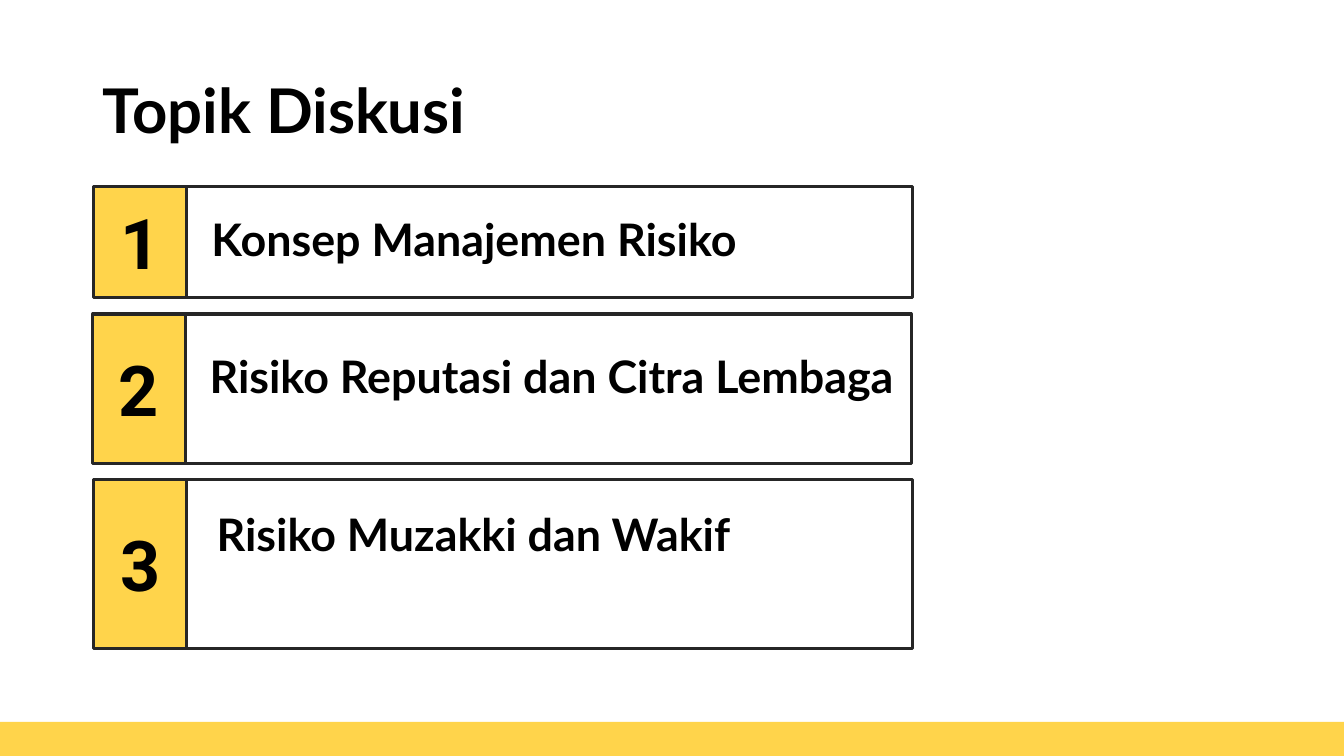
"""Build the discussion topics slide with three numbered boxes."""
from dataclasses import dataclass

from pptx import Presentation
from pptx.dml.color import RGBColor
from pptx.enum.shapes import MSO_SHAPE
from pptx.enum.text import MSO_ANCHOR, PP_ALIGN
from pptx.shapes.autoshape import Shape
from pptx.shapes.shapetree import GroupShapes, SlideShapes
from pptx.util import Emu, Inches, Pt

RECTANGLE = MSO_SHAPE.RECTANGLE
TOP, MIDDLE = MSO_ANCHOR.TOP, MSO_ANCHOR.MIDDLE
LEFT, CENTER = PP_ALIGN.LEFT, PP_ALIGN.CENTER
SLIDE_WIDTH, SLIDE_HEIGHT = Inches(13.33), Inches(7.5)

ShapeTree = SlideShapes | GroupShapes


@dataclass(frozen=True)
class Theme:
    """Colours, fonts and type sizes of the slide."""
    accent: str = "FFD44B"
    paper: str = "FFFFFF"
    outline: str = "262626"
    ink: str = "000000"
    text_font: str = "Lato"
    number_font: str = "Roboto"
    title_size: int = 44
    number_size: int = 50
    topic_size: int = 32
    outline_width: float = 2.25


@dataclass(frozen=True)
class Area:
    """A rectangle in percent of the slide's width and height."""
    left: float
    top: float
    width: float
    height: float

    def lengths(self) -> tuple[Emu, Emu, Emu, Emu]:
        """Return left, top, width and height as slide lengths."""
        return (Emu(round(SLIDE_WIDTH * self.left / 100)),
                Emu(round(SLIDE_HEIGHT * self.top / 100)),
                Emu(round(SLIDE_WIDTH * self.width / 100)),
                Emu(round(SLIDE_HEIGHT * self.height / 100)))


@dataclass(frozen=True)
class Topic:
    """A topic with its row height and label placement, in percent."""
    text: str
    left: float
    height: float
    label_indent: float
    label_drop: float
    label_width: float
    label_height: float


THEME = Theme()
TITLE_AREA = Area(6.9, 5.33, 86.25, 19.33)
FOOTER_AREA = Area(0, 95.47, 100, 4.53)
FIRST_ROW_TOP, ROW_GAP = 24.67, 2.2
NUMBER_WIDTH, PANEL_WIDTH = 6.9, 54
TOPICS = (
    Topic("Konsep Manajemen Risiko", 6.98, 14.67, 8.02, 2.67, 44.78, 8.53),
    Topic("Risiko Reputasi dan Citra Lembaga", 6.9, 19.73, 7.95, 3.87, 54, 15.73),
    Topic("Risiko Muzakki dan Wakif", 6.98, 22.27, 8.4, 2.93, 50.7, 8.53),
)


def write_text(box: Shape, text: str, *, size: float, font: str,
               align: PP_ALIGN = LEFT, anchor: MSO_ANCHOR = TOP,
               spacing: float = 1.0) -> None:
    """Write one bold paragraph into a box."""
    frame = box.text_frame
    frame.word_wrap = True
    frame.vertical_anchor = anchor
    para = frame.paragraphs[0]
    para.alignment = align
    para.line_spacing = spacing
    span = para.add_run()
    span.text = text
    span.font.name = font
    span.font.size = Pt(size)
    span.font.bold = True
    span.font.color.rgb = RGBColor.from_string(THEME.ink)


def add_rectangle(shapes: ShapeTree, area: Area, fill: str,
                  outlined: bool = True) -> Shape:
    """Add a flat filled rectangle, outlined unless told otherwise."""
    box = shapes.add_shape(RECTANGLE, *area.lengths())
    box.shadow.inherit = False
    box.fill.solid()
    box.fill.fore_color.rgb = RGBColor.from_string(fill)
    if outlined:
        box.line.color.rgb = RGBColor.from_string(THEME.outline)
        box.line.width = Pt(THEME.outline_width)
    else:
        box.line.fill.background()
    return box


def add_topic(shapes: ShapeTree, topic: Topic, number: int, top: float) -> None:
    """Add a group of number box, panel and label for one topic."""
    members = shapes.add_group_shape().shapes
    number_area = Area(topic.left, top, NUMBER_WIDTH, topic.height)
    panel_area = Area(topic.left + NUMBER_WIDTH, top, PANEL_WIDTH, topic.height)
    label_area = Area(topic.left + topic.label_indent, top + topic.label_drop,
                      topic.label_width, topic.label_height)
    number_box = add_rectangle(members, number_area, THEME.accent)
    write_text(number_box, str(number), size=THEME.number_size,
               font=THEME.number_font, align=CENTER, anchor=MIDDLE)
    add_rectangle(members, panel_area, THEME.paper)
    label = members.add_textbox(*label_area.lengths())
    write_text(label, topic.text, size=THEME.topic_size, font=THEME.text_font)


def main() -> None:
    """Build and save the deck."""
    deck = Presentation()
    deck.slide_width, deck.slide_height = SLIDE_WIDTH, SLIDE_HEIGHT
    page = deck.slides.add_slide(deck.slide_layouts[6])
    title = page.shapes.add_textbox(*TITLE_AREA.lengths())
    write_text(title, "Topik Diskusi", size=THEME.title_size,
               font=THEME.text_font, anchor=MIDDLE, spacing=0.9)
    top = FIRST_ROW_TOP
    for number, topic in enumerate(TOPICS, start=1):
        add_topic(page.shapes, topic, number, top)
        top += topic.height + ROW_GAP
    add_rectangle(page.shapes, FOOTER_AREA, THEME.accent, outlined=False)
    deck.save("out.pptx")


if __name__ == "__main__":
    main()
